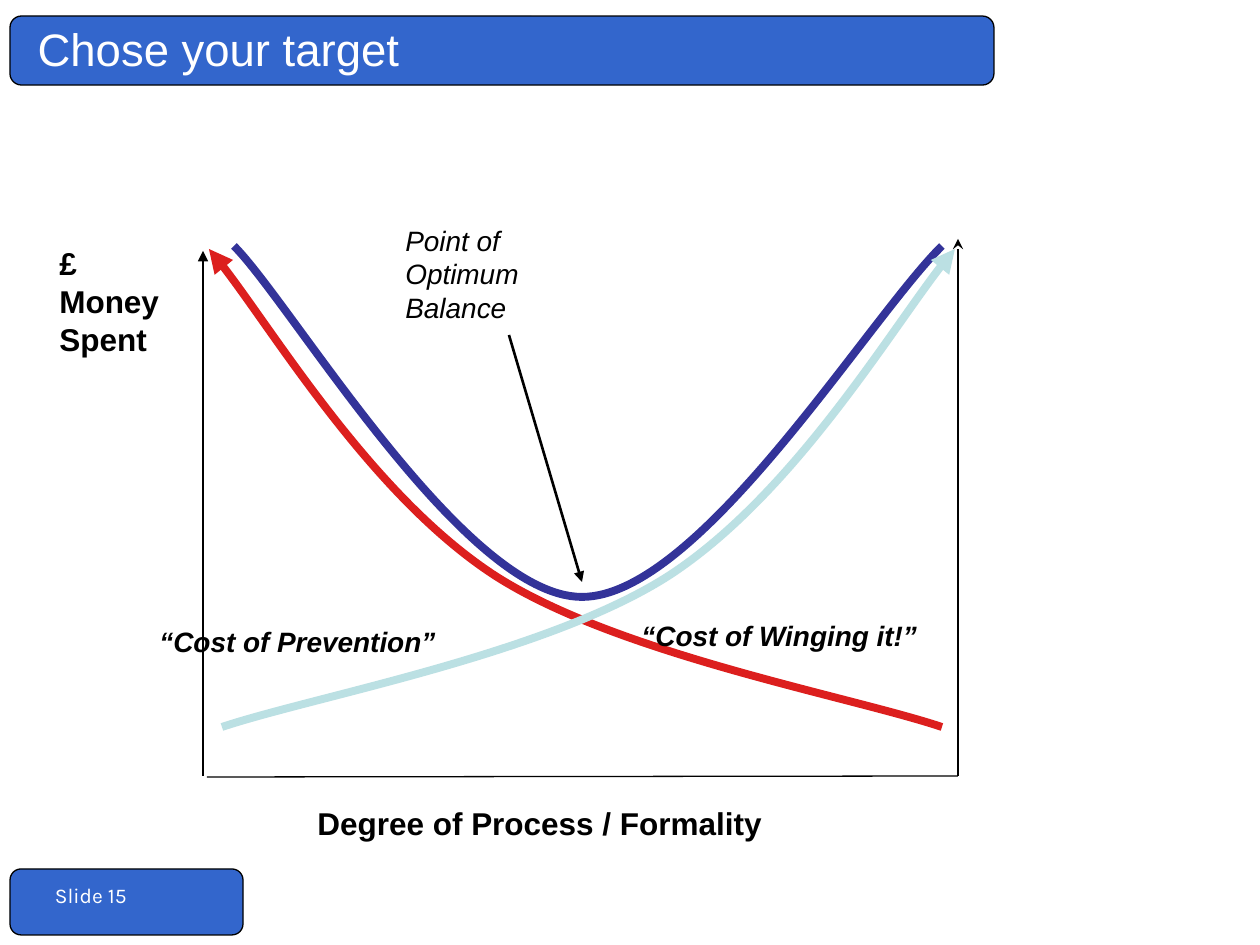
from dataclasses import dataclass

from lxml import etree
from pptx import Presentation
from pptx.dml.color import RGBColor
from pptx.enum import shapes, text
from pptx.oxml.ns import qn
from pptx.util import Emu, Pt

PX = 914400 / 126


@dataclass(frozen=True)
class Theme:
    font: str = "Arial"
    number_font: str = "Karla"
    bar: str = "3366CC"
    ink: str = "000000"
    paper: str = "FFFFFF"
    total: str = "333399"
    winging: str = "DC1F1E"
    prevention: str = "BBE0E3"
    title_size: int = 26
    axis_size: int = 18
    label_size: int = 16
    number_size: int = 12
    thin: float = 0.75
    pointer: float = 1.5
    curve: float = 4.5


THEME = Theme()


def px(value):
    return Emu(round(value * PX))


def color(code):
    return RGBColor.from_string(code)


def place(shape, left, top, width, height):
    shape.left, shape.top = px(left), px(top)
    shape.width, shape.height = px(width), px(height)


def write(para, words, size, ink=THEME.ink, font=THEME.font, bold=False, italic=False):
    para.alignment = text.PP_ALIGN.LEFT
    span = para.add_run()
    span.text = words
    span.font.name, span.font.size = font, Pt(size)
    span.font.bold, span.font.italic = bold, italic
    span.font.color.rgb = color(ink)


def add_bar(page, left, top, width, height):
    bar = page.shapes.add_shape(shapes.MSO_SHAPE.ROUNDED_RECTANGLE,
                                px(left), px(top), px(width), px(height))
    bar.shadow.inherit = False
    bar.fill.solid()
    bar.fill.fore_color.rgb = color(THEME.bar)
    bar.line.color.rgb = color(THEME.ink)
    bar.line.width = Pt(THEME.thin)


def set_title(page, words):
    title = page.shapes.title
    page.shapes._spTree.append(title._element)  # bring in front of the bars
    place(title, 25, 0, 960, 96)
    frame = title.text_frame
    frame.vertical_anchor = text.MSO_ANCHOR.MIDDLE
    write(frame.paragraphs[0], words, THEME.title_size, THEME.paper)


def add_label(page, area, lines, size, **style):
    box = page.shapes.add_textbox(*map(px, area))
    frame = box.text_frame
    frame.word_wrap = True
    for index, line in enumerate(lines):
        para = frame.add_paragraph() if index else frame.paragraphs[0]
        write(para, line, size, **style)
    return box


def add_arrowhead(shape, end, kind):
    outline = shape._element.spPr.find(qn("a:ln"))
    etree.SubElement(outline, qn(f"a:{end}"), type=kind)


def add_line(page, start, end, width=THEME.thin, head=None):
    line = page.shapes.add_connector(shapes.MSO_CONNECTOR.STRAIGHT,
                                     *map(px, (*start, *end)))
    line.line.color.rgb = color(THEME.ink)
    line.line.width = Pt(width)
    if head:
        add_arrowhead(line, "tailEnd", head)
    etree.SubElement(line._element.spPr, qn("a:effectLst"))


def add_curve(page, points, ink, head=None):
    """Draw cubic segments: a start point, then two controls and an end for each."""
    builder = page.shapes.build_freeform(*points[0], scale=PX)
    builder.add_line_segments(points[1:], close=False)
    curve = builder.convert_to_shape()
    steps = list(curve._element.iter(qn("a:lnTo")))
    for first in range(0, len(steps), 3):
        bezier = etree.Element(qn("a:cubicBezTo"))
        steps[first].addprevious(bezier)
        for step in steps[first:first + 3]:
            bezier.append(step[0])
            step.getparent().remove(step)
    curve.shadow.inherit = False
    curve.fill.background()
    curve.line.color.rgb = color(ink)
    curve.line.width = Pt(THEME.curve)
    if head:
        add_arrowhead(curve, "headEnd", head)


def add_slide_number(page):
    box = add_label(page, (0, 869, 174, 47), ["Slide 15"], THEME.number_size,
                    ink=THEME.paper, font=THEME.number_font)
    box.text_frame.margin_left = px(55)
    box.text_frame.margin_top = px(14)


def add_cost_chart(page):
    left, right, base = 203, 958, 776
    add_line(page, (left, base), (left, 251), head="triangle")
    add_line(page, (207, base + 1), (right, base))
    add_label(page, (47, 238, 169, 82), ["£", "Money Spent"], THEME.axis_size, bold=True)
    add_label(page, (305, 798, 601, 50), ["Degree of Process / Formality"],
              THEME.axis_size, bold=True)

    total = [(234, 246), (292, 304), (464, 597), (582, 597),
             (699, 597), (868, 319), (942, 246)]
    winging = [(209, 249), (257, 304), (372, 495), (494, 575),
               (616, 654), (849, 696), (942, 727)]
    prevention = [(2 * 582 - x, y) for x, y in winging]

    add_curve(page, total, THEME.total)
    add_label(page, (393, 217, 221, 74), ["Point of Optimum Balance"],
              THEME.label_size, italic=True)
    add_line(page, (509, 335), (582, 582), THEME.pointer, "triangle")
    add_curve(page, winging, THEME.winging, "triangle")
    add_label(page, (629, 612, 360, 43), ["“Cost of Winging it!”"],
              THEME.label_size, bold=True, italic=True)
    add_curve(page, prevention, THEME.prevention, "triangle")
    add_label(page, (147, 618, 382, 43), ["“Cost of Prevention”"],
              THEME.label_size, bold=True, italic=True)
    add_line(page, (right, base), (right, 239), head="stealth")


def main():
    deck = Presentation()
    deck.slide_width, deck.slide_height = px(1260), px(945)
    page = deck.slides.add_slide(deck.slide_layouts.get_by_name("Title Only"))
    add_bar(page, 10, 16, 984, 69)
    add_bar(page, 10, 869, 233, 66)
    add_slide_number(page)
    set_title(page, "Chose your target")
    add_cost_chart(page)
    deck.save("out.pptx")


if __name__ == "__main__":
    main()
